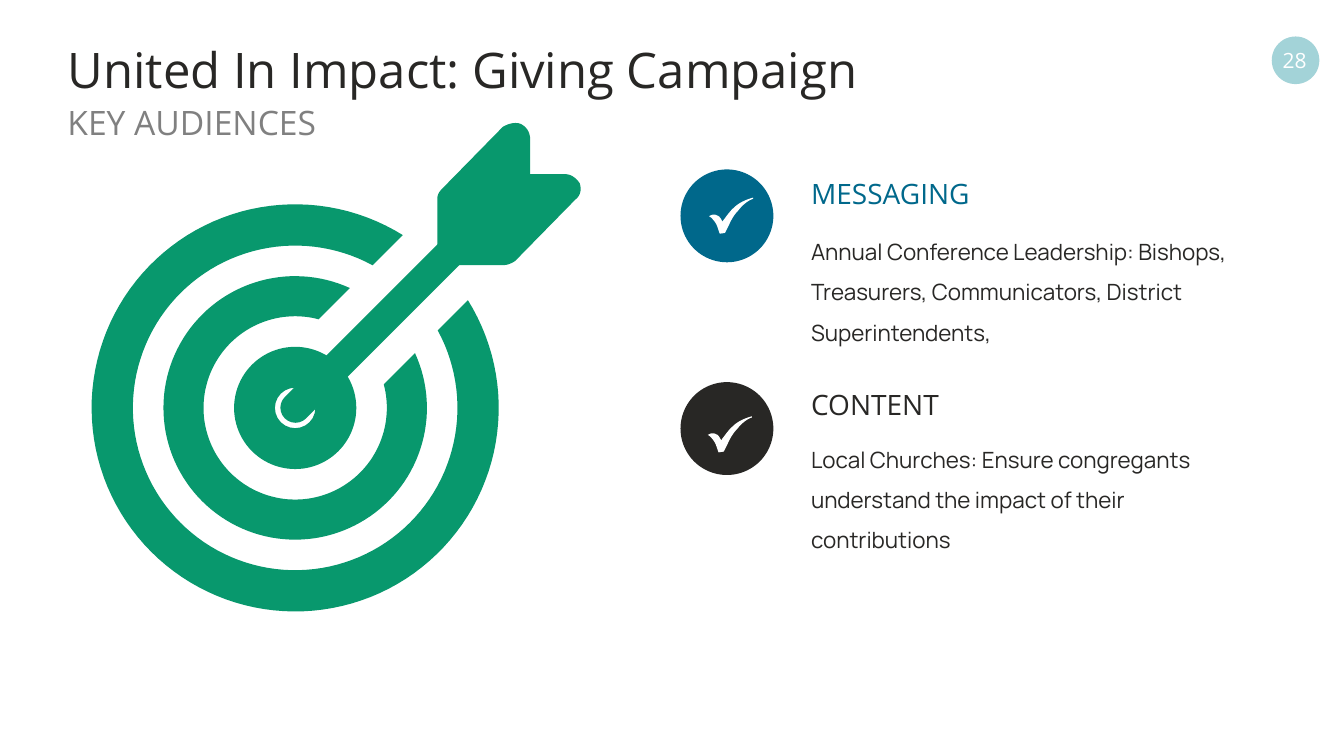
from dataclasses import dataclass
from math import asin, cos, pi, sin

from pptx import Presentation
from pptx.dml.color import RGBColor
from pptx.enum.shapes import MSO_SHAPE
from pptx.enum.text import MSO_ANCHOR, MSO_AUTO_SIZE, PP_ALIGN
from pptx.util import Cm, Pt

OVAL, DONUT, ROUNDED = MSO_SHAPE.OVAL, MSO_SHAPE.DONUT, MSO_SHAPE.ROUNDED_RECTANGLE
MIDDLE, TOP = MSO_ANCHOR.MIDDLE, MSO_ANCHOR.TOP
LEFT, CENTER = PP_ALIGN.LEFT, PP_ALIGN.CENTER
NO_AUTOFIT = MSO_AUTO_SIZE.NONE

Point = tuple[float, float]


@dataclass(frozen=True)
class Theme:
    ink: str = "282725"
    blue: str = "00688B"
    green: str = "08986D"
    grey: str = "808080"
    badge: str = "A3D3D8"
    white: str = "FFFFFF"
    heading_font: str = "Open Sans"
    body_font: str = "Manrope"
    title_size: int = 35
    subtitle_size: int = 24
    heading_size: int = 20
    body_size: int = 16
    number_size: int = 15


@dataclass(frozen=True)
class Box:
    left: float
    top: float
    width: float
    height: float

    def emu(self) -> tuple[Cm, Cm, Cm, Cm]:
        return Cm(self.left), Cm(self.top), Cm(self.width), Cm(self.height)


@dataclass(frozen=True)
class Style:
    size: int
    color: str
    font: str = Theme.heading_font
    spacing: float = 1.0
    align: PP_ALIGN = LEFT
    anchor: MSO_ANCHOR = TOP


@dataclass(frozen=True)
class Audience:
    heading: str
    body: str
    color: str
    circle_top: float
    check_at: Point
    heading_top: float
    body_top: float


@dataclass(frozen=True)
class Ring:
    outer: float
    inner: float


T = Theme()

AUDIENCES = [
    Audience("MESSAGING",
             "Annual Conference Leadership: Bishops, Treasurers, Communicators, "
             "District Superintendents,",
             T.blue, 4.27, (17.86, 4.98), 4.32, 5.54),
    Audience("CONTENT",
             "Local Churches: Ensure congregants understand the impact of their contributions",
             T.ink, 9.63, (17.83, 10.49), 9.65, 10.77),
]

# Target geometry in cm: the gap runs along the arrow at 45 degrees
TARGET_X, TARGET_Y = 7.44, 10.28
RINGS = [Ring(5.13, 4.09), Ring(3.32, 2.31)]
GAP_HALF = 1.16
BULLSEYE, HOLE = 1.54, 0.51
SHAFT_LENGTH, SHAFT_WIDTH = 6.2, 0.76
SHAFT_REACH = 1.93

# Outlines in cm: two numbers draw a line, six a Bézier curve
FLETCHING = [
    (12.7, 6.68), (11.4, 6.68), (11.2, 6.68, 11.02, 6.53, 11.02, 6.3), (11.02, 5.03),
    (11.02, 4.9, 11.07, 4.83, 11.15, 4.75), (12.67, 3.2),
    (12.8, 3.12, 12.98, 3.07, 13.11, 3.12), (13.26, 3.18, 13.36, 3.33, 13.36, 3.51),
    (13.36, 4.39), (14.25, 4.39), (14.4, 4.39, 14.53, 4.5, 14.61, 4.62),
    (14.66, 4.78, 14.63, 4.93, 14.5, 5.03), (12.98, 6.58),
    (12.9, 6.63, 12.8, 6.68, 12.7, 6.68),
]
CHECK = [
    (0.23, 0.46), (0.18, 0.43, 0.15, 0.43, 0.13, 0.43), (0.1, 0.43, 0.08, 0.43, 0.03, 0.46),
    (0, 0.46, 0, 0.48, 0.03, 0.48), (0.1, 0.53, 0.18, 0.64, 0.2, 0.69),
    (0.23, 0.76, 0.25, 0.84, 0.28, 0.91), (0.41, 0.89), (0.51, 0.69),
    (0.58, 0.53, 0.66, 0.41, 0.74, 0.33), (0.84, 0.2, 0.97, 0.08, 1.12, 0.03), (1.12, 0),
    (0.94, 0.05, 0.76, 0.13, 0.64, 0.25), (0.51, 0.36, 0.41, 0.53, 0.36, 0.58),
    (0.36, 0.61), (0.33, 0.58), (0.3, 0.51, 0.25, 0.46, 0.23, 0.46),
]


def paint(sp, color: str) -> None:
    sp.fill.solid()
    sp.fill.fore_color.rgb = RGBColor.from_string(color)
    sp.line.fill.background()
    sp.shadow.inherit = False


def add_preset(s, kind: MSO_SHAPE, box: Box, color: str):
    sp = s.shapes.add_shape(kind, *box.emu())
    paint(sp, color)
    return sp


def add_outline(s, points: list[Point], color: str) -> None:
    start, *rest = [(Cm(x), Cm(y)) for x, y in points]
    builder = s.shapes.build_freeform(*start)
    builder.add_line_segments(rest, close=True)
    paint(builder.convert_to_shape(), color)


def flatten(segments: list[tuple], dx: float = 0, dy: float = 0, steps: int = 10) -> list[Point]:
    points = []
    for seg in segments:
        if len(seg) == 2:
            points.append(seg)
            continue
        x0, y0 = points[-1]
        x1, y1, x2, y2, x3, y3 = seg
        for i in range(1, steps + 1):
            t = i / steps
            u = 1 - t
            a, b, c, d = u ** 3, 3 * u * u * t, 3 * u * t * t, t ** 3
            points.append((a * x0 + b * x1 + c * x2 + d * x3,
                           a * y0 + b * y1 + c * y2 + d * y3))
    return [(x + dx, y + dy) for x, y in points]


def gapped_arc(radius: float, steps: int = 120) -> list[Point]:
    half = asin(GAP_HALF / radius)
    start, sweep = -pi / 4 + half, 2 * (pi - half)
    angles = [start + sweep * i / steps for i in range(steps + 1)]
    return [(TARGET_X + radius * cos(a), TARGET_Y + radius * sin(a)) for a in angles]


def write(sp, text: str, style: Style) -> None:
    tf = sp.text_frame
    tf.word_wrap = True
    tf.auto_size = NO_AUTOFIT
    tf.vertical_anchor = style.anchor
    p = tf.paragraphs[0]
    p.text = text
    p.alignment = style.align
    p.line_spacing = style.spacing
    p.font.name = style.font
    p.font.size = Pt(style.size)
    p.font.color.rgb = RGBColor.from_string(style.color)


def add_text(s, box: Box, text: str, style: Style) -> None:
    write(s.shapes.add_textbox(*box.emu()), text, style)


def add_audience(s, item: Audience) -> None:
    add_preset(s, OVAL, Box(17.15, item.circle_top, 2.34, 2.34), item.color)
    add_outline(s, flatten(CHECK, *item.check_at), T.white)
    add_text(s, Box(20.19, item.heading_top, 9.63, 1.12), item.heading,
             Style(T.heading_size, item.color))
    add_text(s, Box(20.19, item.body_top, 11.35, 3.23), item.body,
             Style(T.body_size, T.ink, T.body_font, 1.5))


def add_target(s) -> None:
    for ring in RINGS:
        add_outline(s, gapped_arc(ring.outer) + gapped_arc(ring.inner)[::-1], T.green)
    disc = add_preset(s, DONUT, Box(TARGET_X - BULLSEYE, TARGET_Y - BULLSEYE,
                                    2 * BULLSEYE, 2 * BULLSEYE), T.green)
    disc.adjustments[0] = (BULLSEYE - HOLE) / (2 * BULLSEYE)
    shaft = add_preset(s, ROUNDED, Box(TARGET_X + SHAFT_REACH - SHAFT_LENGTH / 2,
                                       TARGET_Y - SHAFT_REACH - SHAFT_WIDTH / 2,
                                       SHAFT_LENGTH, SHAFT_WIDTH), T.green)
    shaft.adjustments[0] = 0.5
    shaft.rotation = -45
    add_outline(s, flatten(FLETCHING), T.green)


def main() -> None:
    prs = Presentation()
    prs.slide_width, prs.slide_height = Cm(33.87), Cm(19.05)
    s = prs.slides.add_slide(prs.slide_layouts[5])

    # Title, subtitle and page number
    title = s.shapes.title
    title.left, title.top, title.width, title.height = Box(1.45, 0.99, 29.21, 1.68).emu()
    write(title, "United In Impact: Giving Campaign",
          Style(T.title_size, T.ink, spacing=0.9, anchor=MIDDLE))
    add_text(s, Box(1.45, 2.44, 29.69, 1.27), "KEY AUDIENCES", Style(T.subtitle_size, T.grey))
    add_preset(s, OVAL, Box(32.05, 0.92, 1.2, 1.2), T.badge)
    add_text(s, Box(31.95, 1.14, 1.35, 0.76), "28",
             Style(T.number_size, T.white, align=CENTER, anchor=MIDDLE))

    # Audiences and target
    for item in AUDIENCES:
        add_audience(s, item)
    add_target(s)
    prs.save("out.pptx")


if __name__ == "__main__":
    main()
